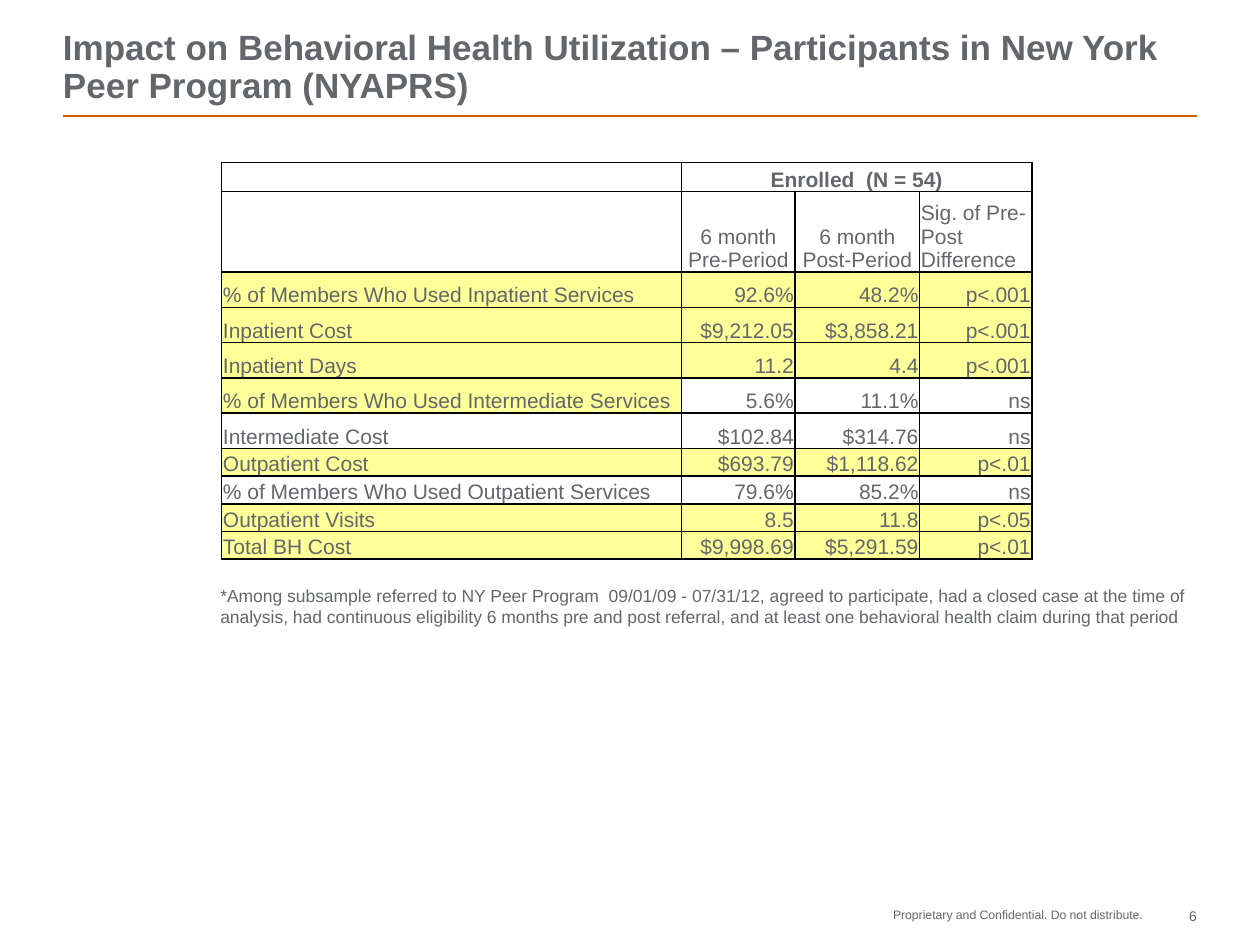
from collections import namedtuple
from dataclasses import dataclass

from lxml import etree
from pptx import Presentation
from pptx import util as u
from pptx.dml.color import RGBColor
from pptx.enum import shapes, text
from pptx.oxml.ns import qn

# The slide is a grid of 100 columns by 75 rows; all lengths count grid units
COLUMNS, ROWS = 100, 75
UNIT = u.Inches(10) // COLUMNS
Box = namedtuple("Box", "left top width height")


@dataclass(frozen=True)
class Theme:
    font: str = "Arial"
    ink: str = "63666A"
    accent: str = "D45D00"
    highlight: str = "FFFF99"
    border: str = "000000"
    title_size: int = 20
    table_size: int = 12
    note_size: int = 10
    number_size: int = 8
    footer_size: int = 7
    line_width: int = 1


THEME = Theme()
LEFT, CENTER, RIGHT = text.PP_ALIGN.LEFT, text.PP_ALIGN.CENTER, text.PP_ALIGN.RIGHT

COLUMN_WIDTHS = [36.5, 9, 9.9, 8.9]
ROW_HEIGHTS = [2.3, 6.4] + [2.8] * 5 + [2.2] * 4
GROUP_HEADING = "Enrolled  (N = 54)"
HEADINGS = ["", "6 month Pre-Period", "6 month Post-Period", "Sig. of Pre-Post Difference"]
HEADING_ALIGNMENTS = [LEFT, CENTER, CENTER, LEFT]
# Each measure: its four cells, then how many of them are highlighted
MEASURES = [
    (["% of Members Who Used Inpatient Services", "92.6%", "48.2%", "p<.001"], 4),
    (["Inpatient Cost", "$9,212.05", "$3,858.21", "p<.001"], 4),
    (["Inpatient Days", "11.2", "4.4", "p<.001"], 4),
    (["% of Members Who Used Intermediate Services", "5.6%", "11.1%", "ns"], 1),
    (["Intermediate Cost", "$102.84", "$314.76", "ns"], 0),
    (["Outpatient Cost", "$693.79", "$1,118.62", "p<.01"], 4),
    (["% of Members Who Used Outpatient Services", "79.6%", "85.2%", "ns"], 0),
    (["Outpatient Visits", "8.5", "11.8", "p<.05"], 4),
    (["Total BH Cost", "$9,998.69", "$5,291.59", "p<.01"], 4),
]


def grid(length):
    return u.Emu(round(length * UNIT))


def add_run(paragraph, words, size, bold=False):
    run = paragraph.add_run()
    run.text = words
    run.font.name = THEME.font
    run.font.size = u.Pt(size)
    run.font.bold = bold
    run.font.color.rgb = RGBColor.from_string(THEME.ink)


def add_text(slide, box, words, size, bold=False, alignment=LEFT,
             anchor=text.MSO_ANCHOR.TOP, margins=(0, 0), spacing=1.0, wrap=True):
    shape = slide.shapes.add_textbox(*map(grid, box))
    frame = shape.text_frame
    frame.word_wrap = wrap
    frame.vertical_anchor = anchor
    frame.margin_left = frame.margin_right = grid(margins[0])
    frame.margin_top = frame.margin_bottom = grid(margins[1])
    paragraph = frame.paragraphs[0]
    paragraph.alignment = alignment
    paragraph.line_spacing = spacing
    add_run(paragraph, words, size, bold)


def add_borders(cell):
    properties = cell._tc.get_or_add_tcPr()
    for position, side in enumerate(("lnL", "lnR", "lnT", "lnB")):
        line = etree.Element(qn(f"a:{side}"), w=str(u.Pt(THEME.line_width)))
        fill = etree.SubElement(line, qn("a:solidFill"))
        etree.SubElement(fill, qn("a:srgbClr"), val=THEME.border)
        properties.insert(position, line)


def fill_cell(cell, words, alignment, bold=False, highlighted=False):
    cell.margin_left = cell.margin_right = cell.margin_top = grid(0.1)
    cell.margin_bottom = 0
    cell.vertical_anchor = text.MSO_ANCHOR.BOTTOM
    if highlighted:
        cell.fill.solid()
        cell.fill.fore_color.rgb = RGBColor.from_string(THEME.highlight)
    else:
        cell.fill.background()
    add_borders(cell)
    paragraph = cell.text_frame.paragraphs[0]
    paragraph.alignment = alignment
    if words:
        add_run(paragraph, words, THEME.table_size, bold)
    else:  # keep an empty cell from stretching its row
        etree.SubElement(paragraph._p, qn("a:endParaRPr"), sz=str(THEME.table_size * 100))


def add_header(slide, box):
    # Title above an accent rule
    add_text(slide, Box(box.left, box.top, 91.4, 6.7),
             "Impact on Behavioral Health Utilization – Participants in New York "
             "Peer Program (NYAPRS)", THEME.title_size, bold=True,
             anchor=text.MSO_ANCHOR.BOTTOM, spacing=0.9)
    bottom = grid(box.top + box.height)
    rule = slide.shapes.add_connector(shapes.MSO_CONNECTOR.STRAIGHT, grid(box.left), bottom,
                                      grid(box.left + box.width), bottom)
    rule.line.color.rgb = RGBColor.from_string(THEME.accent)
    rule.line.width = u.Pt(THEME.line_width)
    etree.SubElement(rule._element.spPr, qn("a:effectLst"))


def add_results_table(slide, box):
    frame = slide.shapes.add_table(len(ROW_HEIGHTS), len(COLUMN_WIDTHS), *map(grid, box))
    table = frame.table
    table.first_row = table.horz_banding = False
    for column, width in zip(table.columns, COLUMN_WIDTHS):
        column.width = grid(width)
    for row, height in zip(table.rows, ROW_HEIGHTS):
        row.height = grid(height)

    # Two heading rows, the first spanning the value columns
    table.cell(0, 1).merge(table.cell(0, 3))
    for column, words in enumerate(["", GROUP_HEADING, "", ""]):
        fill_cell(table.cell(0, column), words, CENTER, bold=True)
    for column, (words, alignment) in enumerate(zip(HEADINGS, HEADING_ALIGNMENTS)):
        fill_cell(table.cell(1, column), words, alignment)

    # Measures
    for row, (values, highlights) in enumerate(MEASURES, start=2):
        for column, words in enumerate(values):
            fill_cell(table.cell(row, column), words, RIGHT if column else LEFT,
                      highlighted=column < highlights)


def add_note(slide, box):
    add_text(slide, box,
             "*Among subsample referred to NY Peer Program  09/01/09 - 07/31/12, agreed to "
             "participate, had a closed case at the time of analysis, had continuous "
             "eligibility 6 months pre and post referral, and at least one behavioral "
             "health claim during that period", THEME.note_size, margins=(1, 0.5))


def add_footer(slide, box):
    number_width = 3.3
    add_text(slide, Box(box.left, box.top, 19.9, 1.2),
             "Proprietary and Confidential. Do not distribute.", THEME.footer_size,
             alignment=RIGHT, wrap=False)
    add_text(slide, Box(box.left + box.width - number_width, box.top, number_width, box.height),
             "6", THEME.number_size, alignment=RIGHT)


def main():
    presentation = Presentation()
    presentation.slide_width, presentation.slide_height = grid(COLUMNS), grid(ROWS)
    slide = presentation.slides.add_slide(presentation.slide_layouts[6])
    add_header(slide, Box(5, 1.7, 90, 7.5))
    add_results_table(slide, Box(17.6, 12.9, sum(COLUMN_WIDTHS), sum(ROW_HEIGHTS)))
    add_note(slide, Box(16.5, 45.9, 81.7, 4.4))
    add_footer(slide, Box(70.8, 72, 24.2, 1.7))
    presentation.save("out.pptx")


if __name__ == "__main__":
    main()
